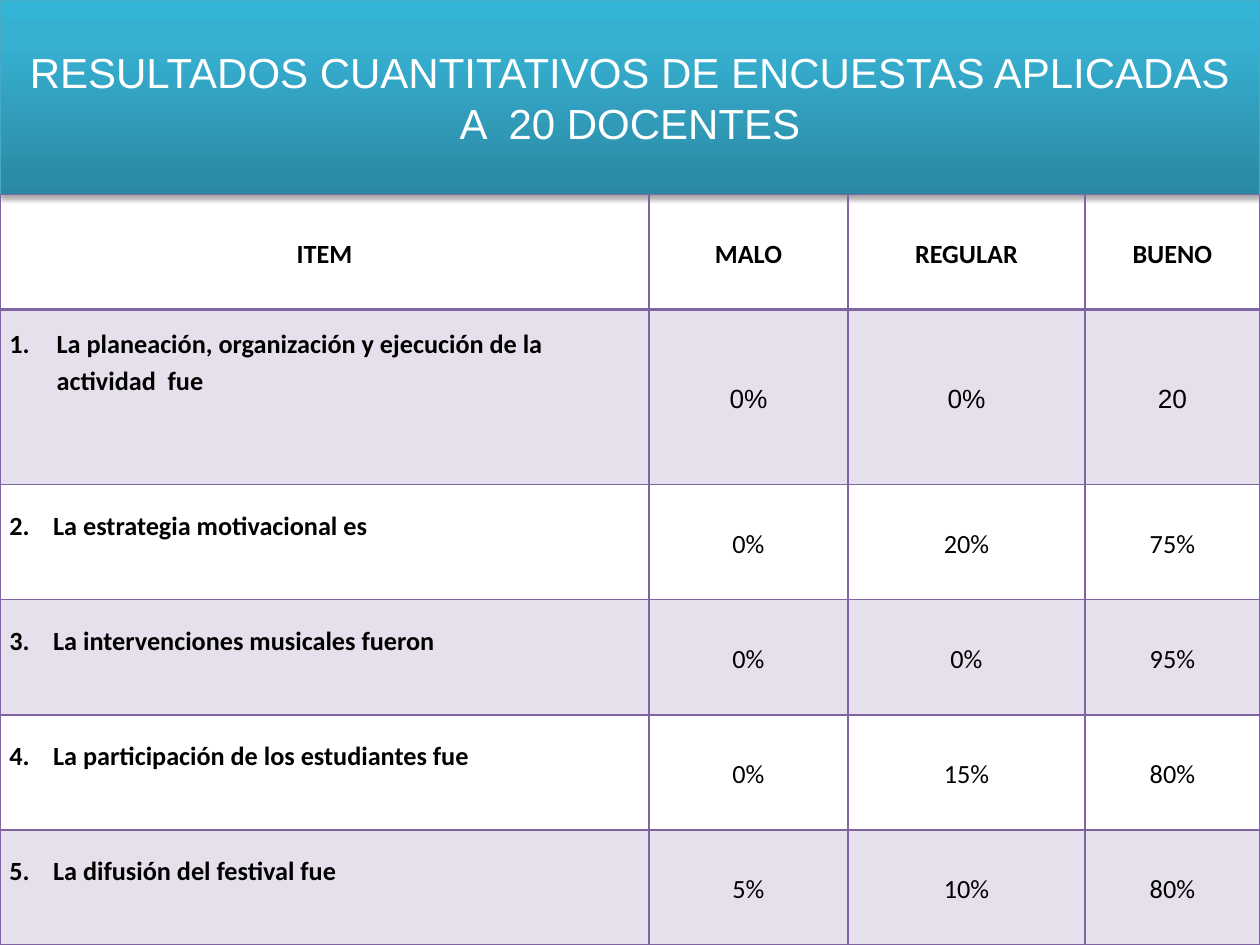
"""Build a slide with the survey results of 20 teachers as a table."""

from dataclasses import dataclass

from lxml.etree import SubElement
from pptx import Presentation
from pptx.dml.color import RGBColor
from pptx.enum.shapes import MSO_SHAPE
from pptx.enum.text import MSO_ANCHOR, PP_ALIGN
from pptx.oxml import parse_xml
from pptx.oxml.ns import nsdecls, qn
from pptx.slide import Slide
from pptx.table import _Cell
from pptx.util import Pt


@dataclass(frozen=True)
class Theme:
    white: str = "FFFFFF"
    black: str = "000000"
    purple: str = "8064A2"
    band_opacity: int = 20
    banner_line: str = "46AAC5"
    banner_stops: tuple[tuple[int, str], ...] = ((0, "2A88A2"), (80, "37B1D2"), (100, "34B4D6"))
    title_font: str = "Arial"
    body_font: str = "Calibri"
    title_size: int = 24
    body_size: int = 15
    line_spacing: float = 1.15


@dataclass(frozen=True)
class SurveyItem:
    question: str
    ratings: tuple[str, str, str]
    height: float = 65.75
    space_below: float = 21
    indent: float = 25
    rating_font: str = "Calibri"


THEME = Theme()
WIDTH, HEIGHT = 720, 540
BANNER_HEIGHT = 111.25
CELL_MARGIN = 5.4
HEADER_HEIGHT = 65.75
COLUMN_WIDTHS = (370.8, 113.8, 135.4, 100)
TITLE = "RESULTADOS CUANTITATIVOS DE ENCUESTAS APLICADAS A  20 DOCENTES"
HEADINGS = ("ITEM", "MALO", "REGULAR", "BUENO")
ITEMS = (
    SurveyItem("La planeación, organización y ejecución de la actividad  fue",
               ("0%", "0%", "20"), 100, 42, 27, "Arial"),
    SurveyItem("La estrategia motivacional es", ("0%", "20%", "75%")),
    SurveyItem("La intervenciones musicales fueron", ("0%", "0%", "95%")),
    SurveyItem("La participación de los estudiantes fue", ("0%", "15%", "80%")),
    SurveyItem("La difusión del festival fue", ("5%", "10%", "80%")),
)


def add_run(paragraph, text: str, font: str, size: float, color: str, bold: bool = False) -> None:
    """Add one formatted run to a paragraph."""
    run = paragraph.add_run()
    run.text = text
    run.font.name = font
    run.font.size = Pt(size)
    run.font.bold = bold
    run.font.color.rgb = RGBColor.from_string(color)


def add_banner(slide: Slide) -> None:
    """Draw the gradient title banner with its soft shadow."""
    banner = slide.shapes.add_shape(MSO_SHAPE.RECTANGLE, 0, 0, Pt(WIDTH), Pt(BANNER_HEIGHT))
    banner.fill.gradient()
    properties = banner._element.spPr
    gradient = properties.find(qn("a:gradFill"))
    stops = gradient.find(qn("a:gsLst"))
    for stop in list(stops):
        stops.remove(stop)
    for position, color in THEME.banner_stops:
        stop = SubElement(stops, qn("a:gs"), pos=str(position * 1000))
        SubElement(stop, qn("a:srgbClr"), val=color)
    gradient.find(qn("a:lin")).set("ang", str(270 * 60000))
    banner.line.color.rgb = RGBColor.from_string(THEME.banner_line)
    banner.line.width = Pt(0.75)
    banner.shadow.inherit = False
    shadow = SubElement(properties.find(qn("a:effectLst")), qn("a:outerShdw"),
                        blurRad=str(Pt(3.1)), dist=str(Pt(1.8)), dir=str(90 * 60000),
                        rotWithShape="0")
    shadow_color = SubElement(shadow, qn("a:srgbClr"), val=THEME.black)
    SubElement(shadow_color, qn("a:alpha"), val="35000")
    frame = banner.text_frame
    frame.word_wrap = True
    frame.vertical_anchor = MSO_ANCHOR.MIDDLE
    paragraph = frame.paragraphs[0]
    paragraph.alignment = PP_ALIGN.CENTER
    add_run(paragraph, TITLE, THEME.title_font, THEME.title_size, THEME.white)


def set_borders(cell: _Cell, top: float, bottom: float) -> None:
    """Give a cell solid purple borders."""
    properties = cell._tc.get_or_add_tcPr()
    widths = {"lnL": 1, "lnR": 1, "lnT": top, "lnB": bottom}
    for index, (side, width) in enumerate(widths.items()):
        border = parse_xml(
            f'<a:{side} {nsdecls("a")} w="{Pt(width)}"><a:solidFill>'
            f'<a:srgbClr val="{THEME.purple}"/></a:solidFill></a:{side}>')
        properties.insert(index, border)


def format_cell(cell: _Cell, row: int, space_below: float = 0) -> None:
    """Set the margins, anchor, fill and borders of a cell in the given row."""
    cell.margin_left = cell.margin_right = Pt(CELL_MARGIN)
    cell.margin_top = 0
    cell.margin_bottom = Pt(space_below)
    cell.vertical_anchor = MSO_ANCHOR.MIDDLE
    if row % 2:
        cell.fill.solid()
        cell.fill.fore_color.rgb = RGBColor.from_string(THEME.purple)
        color = cell._tc.tcPr.find(f"{qn('a:solidFill')}/{qn('a:srgbClr')}")
        SubElement(color, qn("a:alpha"), val=str(THEME.band_opacity * 1000))
    else:
        cell.fill.background()
    set_borders(cell, top=2 if row == 1 else 1, bottom=2 if row == 0 else 1)


def write_centered(cell: _Cell, row: int, text: str, font: str, bold: bool = False) -> None:
    """Fill a heading or rating cell."""
    format_cell(cell, row)
    paragraph = cell.text_frame.paragraphs[0]
    paragraph.alignment = PP_ALIGN.CENTER
    paragraph.line_spacing = THEME.line_spacing
    add_run(paragraph, text, font, THEME.body_size, THEME.black, bold)


def write_question(cell: _Cell, number: int, item: SurveyItem) -> None:
    """Fill a question cell with its numbered text."""
    format_cell(cell, number, item.space_below)
    paragraph = cell.text_frame.paragraphs[0]
    paragraph.line_spacing = THEME.line_spacing
    properties = paragraph._p.get_or_add_pPr()
    properties.set("marL", str(Pt(item.indent)))
    properties.set("indent", str(-Pt(item.indent)))
    SubElement(properties, qn("a:buFont"), typeface="+mj-lt")
    SubElement(properties, qn("a:buAutoNum"), type="arabicPeriod", startAt=str(number))
    add_run(paragraph, item.question, THEME.body_font, THEME.body_size, THEME.black, True)


def add_results_table(slide: Slide) -> None:
    """Draw the table of survey items and ratings."""
    frame = slide.shapes.add_table(len(ITEMS) + 1, len(HEADINGS), 0, Pt(BANNER_HEIGHT),
                                   Pt(WIDTH), Pt(HEIGHT - BANNER_HEIGHT))
    table = frame.table
    table.first_row = table.horz_banding = False
    for column, width in zip(table.columns, COLUMN_WIDTHS):
        column.width = Pt(width)
    table.rows[0].height = Pt(HEADER_HEIGHT)
    for column, heading in enumerate(HEADINGS):
        write_centered(table.cell(0, column), 0, heading, THEME.body_font, True)
    for number, item in enumerate(ITEMS, start=1):
        table.rows[number].height = Pt(item.height)
        write_question(table.cell(number, 0), number, item)
        for column, rating in enumerate(item.ratings, start=1):
            write_centered(table.cell(number, column), number, rating, item.rating_font)


def main() -> None:
    """Create and save the presentation."""
    presentation = Presentation()
    presentation.slide_width = Pt(WIDTH)
    presentation.slide_height = Pt(HEIGHT)
    slide = presentation.slides.add_slide(presentation.slide_layouts[6])
    add_banner(slide)
    add_results_table(slide)
    presentation.save("out.pptx")


if __name__ == "__main__":
    main()
